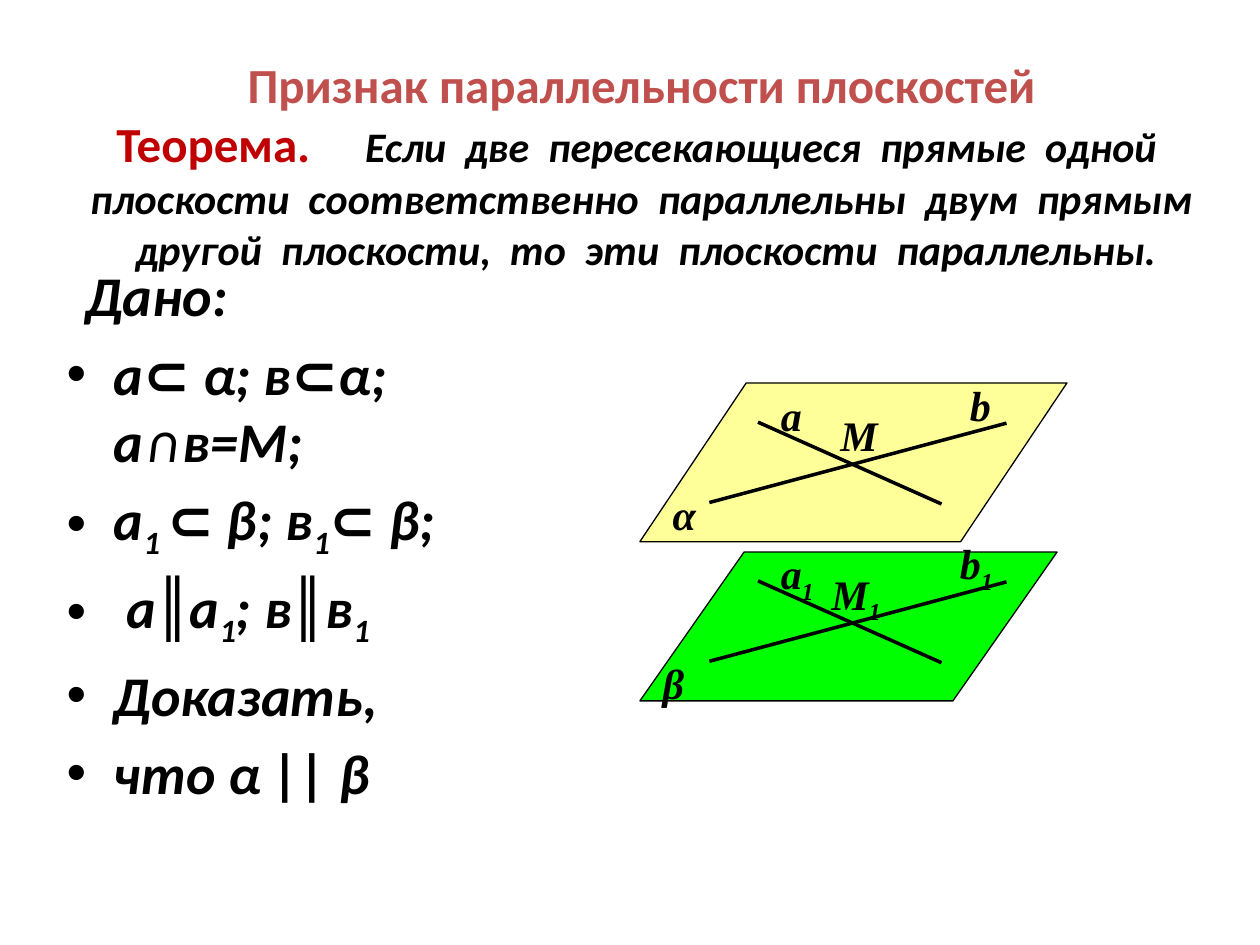
import pptx
import pptx.util
import pptx.dml.color
import pptx.enum.shapes
import pptx.enum.text
import pptx.oxml.ns
import lxml.etree

Cm, Pt = pptx.util.Cm, pptx.util.Pt

THEME = {
    "body_font": "Calibri", "label_font": "Times New Roman",
    "heading": "C0504D", "accent": "C00000", "ink": "000000",
    "alpha": "FFFF99", "beta": "00FF00",
    "heading_size": 28, "theorem_size": 24, "body_size": 32, "label_size": 24,
    "outline": 0.75, "stroke": 2, "theorem_gap": 25,
}

HEADING = "Признак параллельности плоскостей"
THEOREM_WORD = "Теорема."
THEOREM = ("Если  две  пересекающиеся  прямые  одной  плоскости  соответственно  "
           "параллельны  двум  прямым  другой  плоскости,  то  эти  плоскости  параллельны.")
GIVEN = "Дано:"
CONDITIONS = [
    [("а⊂ α; в⊂α; а∩в=М;", False)],
    [("а", False), ("1 ", True), ("⊂ β; в", False), ("1", True), ("⊂ β;", False)],
    [(" а║а", False), ("1", True), ("; в║в", False), ("1", True)],
    [("Доказать,", False)],
    [("что α || β", False)],
]

PLANES = [
    ("beta", (12.9, 11.13, 8.41, 3.0), 0.7),
    ("alpha", (12.9, 7.72, 8.61, 3.2), 0.67),
]
LINES = [(14.3, 10.13, 20.29, 8.53), (15.28, 8.51, 18.98, 10.16)]
PLANE_STEP = 3.2
LABELS = [
    ("α", "", 13.31, 9.73, 0.99),
    ("β", "", 13.11, 13.13, 0.94),
    ("а", "", 15.49, 7.72, 0.94),
    ("b", "", 19.3, 7.52, 0.94),
    ("М", "", 16.69, 8.13, 1.27),
    ("b", "1", 19.1, 10.72, 1.22),
    ("а", "1", 15.49, 10.92, 1.22),
    ("М", "1", 16.51, 11.33, 1.55),
]
LABEL_HEIGHT = 1.27


def rgb(name):
    return pptx.dml.color.RGBColor.from_string(THEME[name])


def add_run(p, text, size, color="ink", font="body_font", italic=True, sub=False):
    r = p.add_run()
    r.text = text
    r.font.name = THEME[font]
    r.font.size = Pt(THEME[size])
    r.font.bold = True
    r.font.italic = italic
    r.font.color.rgb = rgb(color)
    if sub:
        r.font._element.set("baseline", "-25000")
    return r


def place(sp, left, top, width, height):
    sp.left, sp.top, sp.width, sp.height = Cm(left), Cm(top), Cm(width), Cm(height)
    sp.text_frame.auto_size = pptx.enum.text.MSO_AUTO_SIZE.NONE


def fill_title(sp):
    place(sp, 1.5, 0.53, 22.86, 5.56)
    tf = sp.text_frame
    tf.vertical_anchor = pptx.enum.text.MSO_ANCHOR.MIDDLE
    p = tf.paragraphs[0]
    p.alignment = pptx.enum.text.PP_ALIGN.CENTER
    add_run(p, HEADING, "heading_size", "heading", italic=False)
    p.add_line_break()
    add_run(p, THEOREM_WORD, "heading_size", "accent", italic=False)
    gap = add_run(p, " ", "heading_size", "accent", italic=False)
    gap.font._element.set("spc", str(THEME["theorem_gap"] * 100))
    add_run(p, THEOREM, "theorem_size")


def fill_body(sp):
    place(sp, 1.09, 5.13, 10.95, 11.94)
    tf = sp.text_frame
    p = tf.paragraphs[0]
    pPr = p._p.get_or_add_pPr()
    pPr.set("marL", str(Cm(0.38)))
    pPr.set("indent", "0")
    lxml.etree.SubElement(pPr, pptx.oxml.ns.qn("a:buNone"))
    add_run(p, GIVEN, "body_size")
    for condition in CONDITIONS:
        p = tf.add_paragraph()
        for text, sub in condition:
            add_run(p, text, "body_size", sub=sub)


def add_plane(s, name, box, slant):
    shape = pptx.enum.shapes.MSO_SHAPE.PARALLELOGRAM
    sp = s.shapes.add_shape(shape, *map(Cm, box))
    sp.adjustments[0] = slant
    sp.shadow.inherit = False
    sp.fill.solid()
    sp.fill.fore_color.rgb = rgb(name)
    sp.line.color.rgb = rgb("ink")
    sp.line.width = Pt(THEME["outline"])


def add_line(s, x1, y1, x2, y2):
    kind = pptx.enum.shapes.MSO_CONNECTOR.STRAIGHT
    line = s.shapes.add_connector(kind, Cm(x1), Cm(y1), Cm(x2), Cm(y2))
    line.line.color.rgb = rgb("ink")
    line.line.width = Pt(THEME["stroke"])
    lxml.etree.SubElement(line._element.spPr, pptx.oxml.ns.qn("a:effectLst"))


def add_label(s, letter, index, left, top, width):
    sp = s.shapes.add_textbox(Cm(left), Cm(top), Cm(width), Cm(LABEL_HEIGHT))
    tf = sp.text_frame
    tf.word_wrap = False
    p = tf.paragraphs[0]
    add_run(p, letter, "label_size", font="label_font")
    if index:
        add_run(p, index, "label_size", font="label_font", sub=True)


def main():
    prs = pptx.Presentation()
    prs.slide_width, prs.slide_height = Cm(25.4), Cm(19.05)
    s = prs.slides.add_slide(prs.slide_layouts[1])
    fill_title(s.shapes.title)
    fill_body(s.placeholders[1])
    for plane in PLANES:
        add_plane(s, *plane)
    for x1, y1, x2, y2 in LINES:
        for shift in (0, PLANE_STEP):
            add_line(s, x1, y1 + shift, x2, y2 + shift)
    for label in LABELS:
        add_label(s, *label)
    prs.save("out.pptx")


if __name__ == "__main__":
    main()
